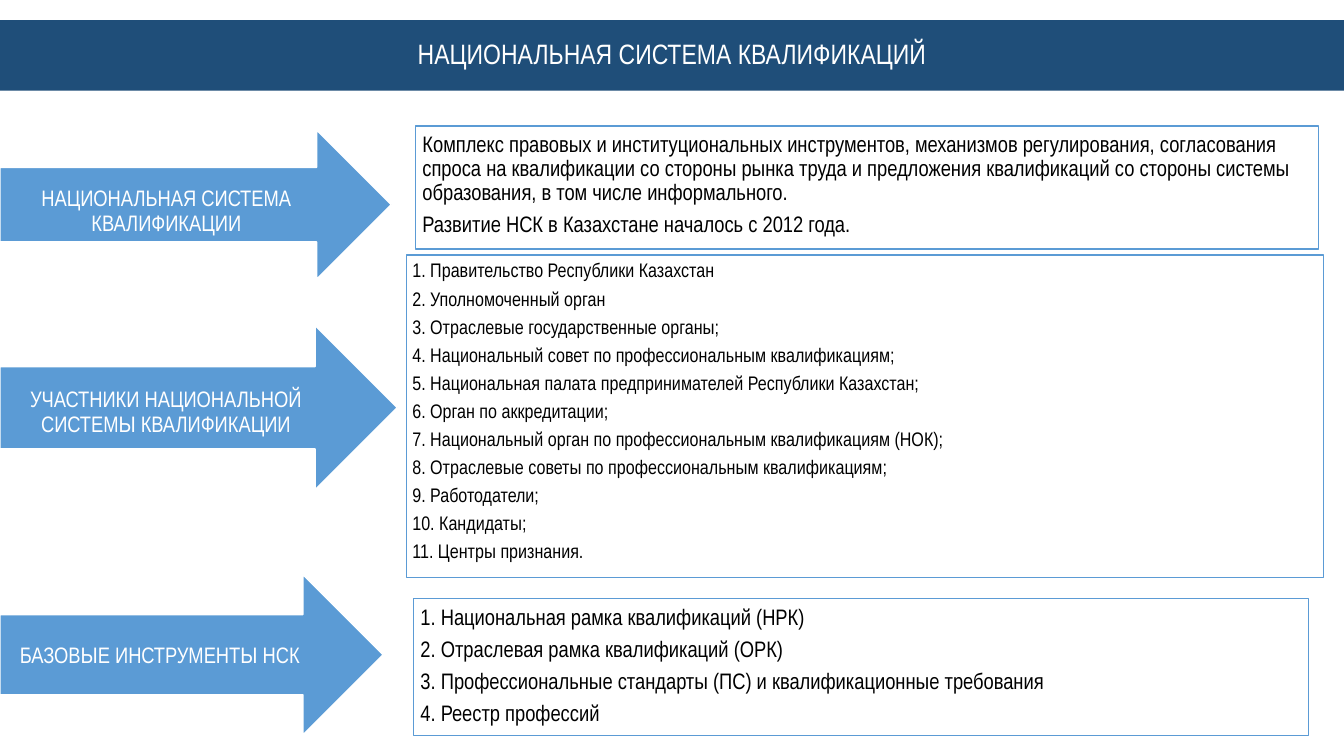
from dataclasses import dataclass

from pptx import Presentation
from pptx.dml.color import RGBColor
from pptx.enum.shapes import MSO_SHAPE
from pptx.enum.text import MSO_ANCHOR, MSO_AUTO_SIZE, PP_ALIGN
from pptx.util import Inches, Pt


@dataclass(frozen=True)
class Theme:
    """Colours, typeface and type sizes of the slide."""

    navy: RGBColor = RGBColor(0x1F, 0x4E, 0x79)
    blue: RGBColor = RGBColor(0x5B, 0x9B, 0xD5)
    white: RGBColor = RGBColor(0xFF, 0xFF, 0xFF)
    black: RGBColor = RGBColor(0x00, 0x00, 0x00)
    font: str = "Arial Narrow"
    title_size: int = 20
    body_size: int = 16
    list_size: int = 14
    line_spacing: float = 0.9
    space_ratio: float = 0.35


THEME = Theme()

ROWS = [
    {
        "label": "НАЦИОНАЛЬНАЯ СИСТЕМА КВАЛИФИКАЦИИ",
        "arrow": (0, 1.29, 3.88, 1.48),
        "arrow_insets": (0.07, 0.14, 0.28, 0),
        "panel": (4.12, 1.25, 8.96, 1.22),
        "inset": 0.07,
        "size": THEME.body_size,
        "lines": [
            "Комплекс правовых и институциональных инструментов, механизмов "
            "регулирования, согласования спроса на квалификации со стороны рынка "
            "труда и предложения квалификаций со стороны системы образования, "
            "в том числе информального.",
            "Развитие НСК в Казахстане началось с 2012 года.",
        ],
    },
    {
        "label": "УЧАСТНИКИ НАЦИОНАЛЬНОЙ СИСТЕМЫ КВАЛИФИКАЦИИ",
        "arrow": (0, 3.23, 3.94, 1.63),
        "arrow_insets": (0.04, 0.1, 0.28, 0),
        "panel": (4.03, 2.53, 9.1, 3.2),
        "inset": 0.06,
        "size": THEME.list_size,
        "lines": [
            "1. Правительство Республики Казахстан",
            "2. Уполномоченный орган",
            "3. Отраслевые государственные органы;",
            "4. Национальный совет по профессиональным квалификациям;",
            "5. Национальная палата предпринимателей Республики Казахстан;",
            "6. Орган по аккредитации;",
            "7. Национальный орган по профессиональным квалификациям (НОК);",
            "8. Отраслевые советы по профессиональным квалификациям;",
            "9. Работодатели;",
            "10. Кандидаты;",
            "11. Центры признания.",
        ],
    },
    {
        "label": "БАЗОВЫЕ ИНСТРУМЕНТЫ НСК",
        "arrow": (0, 5.7, 3.8, 1.59),
        "arrow_insets": (0.05, 0.04, 0.28, 0),
        "panel": (4.1, 5.94, 8.88, 1.36),
        "inset": 0.07,
        "size": THEME.body_size,
        "lines": [
            "1. Национальная рамка квалификаций (НРК)",
            "2. Отраслевая рамка квалификаций (ОРК)",
            "3. Профессиональные стандарты (ПС) и квалификационные требования",
            "4. Реестр профессий",
        ],
    },
]


def set_fill(shape, color):
    """Give a shape a solid fill."""
    shape.fill.solid()
    shape.fill.fore_color.rgb = color


def write_text(shape, lines, size, color, alignment, anchor, insets):
    """Fill a shape with evenly spaced paragraphs."""
    frame = shape.text_frame
    frame.word_wrap = True
    frame.auto_size = MSO_AUTO_SIZE.NONE
    frame.vertical_anchor = anchor
    left, top, right, bottom = map(Inches, insets)
    frame.margin_left, frame.margin_top = left, top
    frame.margin_right, frame.margin_bottom = right, bottom
    frame.text = "\n".join(lines)
    for paragraph in frame.paragraphs:
        paragraph.alignment = alignment
        paragraph.line_spacing = THEME.line_spacing
        paragraph.space_before = Pt(0)
        paragraph.space_after = Pt(size * THEME.space_ratio)
        paragraph.font.name = THEME.font
        paragraph.font.size = Pt(size)
        paragraph.font.color.rgb = color
    frame.paragraphs[-1].space_after = Pt(0)


def add_box(slide, kind, place, fill, line):
    """Add a flat outlined preset shape."""
    shape = slide.shapes.add_shape(kind, *map(Inches, place))
    shape.shadow.inherit = False
    set_fill(shape, fill)
    shape.line.color.rgb = line
    shape.line.width = Pt(1)
    return shape


def format_title(slide, text):
    """Turn the title placeholder into the full-width banner."""
    title = slide.shapes.title
    title.left, title.top = Inches(0), Inches(0.2)
    title.width, title.height = Inches(13.33), Inches(0.7)
    set_fill(title, THEME.navy)
    write_text(title, [text], THEME.title_size, THEME.white,
               PP_ALIGN.CENTER, MSO_ANCHOR.MIDDLE, (0, 0, 0, 0))


def add_row(slide, row):
    """Add a labelled arrow and the panel it points to."""
    arrow = add_box(slide, MSO_SHAPE.RIGHT_ARROW, row["arrow"], THEME.blue, THEME.white)
    write_text(arrow, [row["label"]], THEME.body_size, THEME.white,
               PP_ALIGN.CENTER, MSO_ANCHOR.MIDDLE, row["arrow_insets"])
    panel = add_box(slide, MSO_SHAPE.RECTANGLE, row["panel"], THEME.white, THEME.blue)
    write_text(panel, row["lines"], row["size"], THEME.black,
               PP_ALIGN.LEFT, MSO_ANCHOR.TOP, [row["inset"]] * 4)


def main():
    """Build and save the slide."""
    presentation = Presentation()
    presentation.slide_width = Inches(13.33)
    presentation.slide_height = Inches(7.5)
    slide = presentation.slides.add_slide(presentation.slide_layouts[5])
    format_title(slide, "НАЦИОНАЛЬНАЯ СИСТЕМА КВАЛИФИКАЦИЙ")
    for row in ROWS:
        add_row(slide, row)
    presentation.save("out.pptx")


if __name__ == "__main__":
    main()
